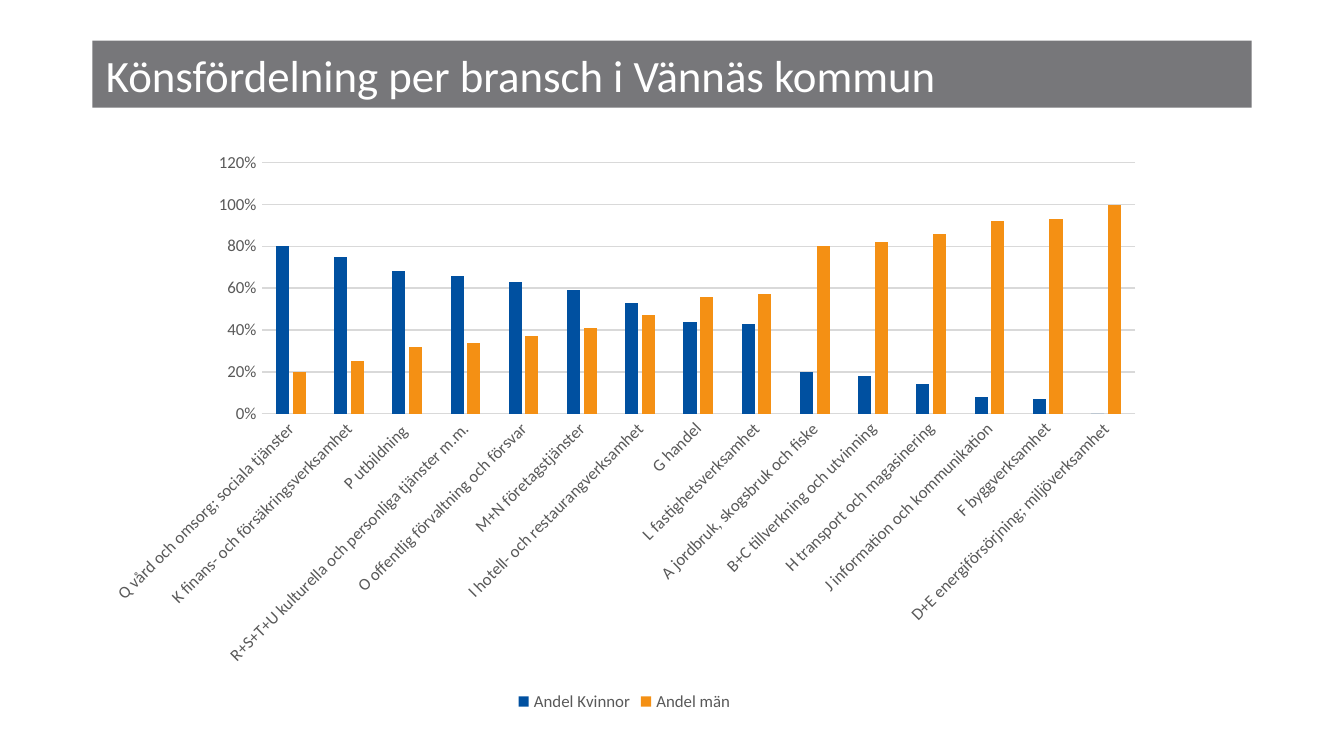
from dataclasses import dataclass

from pptx import Presentation
from pptx.chart.data import CategoryChartData
from pptx.dml.color import RGBColor
from pptx.enum.chart import XL_CHART_TYPE, XL_LEGEND_POSITION, XL_TICK_MARK
from pptx.enum.text import MSO_ANCHOR, PP_ALIGN
from pptx.util import Pt

COLUMN = XL_CHART_TYPE.COLUMN_CLUSTERED
LEGEND_BOTTOM = XL_LEGEND_POSITION.BOTTOM
NO_TICK = XL_TICK_MARK.NONE
MIDDLE = MSO_ANCHOR.MIDDLE
LEFT = PP_ALIGN.LEFT

EMU_PER_PX = 9525
TITLE_ONLY = 5
LABEL_ROTATION = -45 * 60000


@dataclass(frozen=True)
class Theme:
    font: str = "Calibri"
    title_size: int = 24
    chart_size: int = 10
    label_size: int = 9
    line_width: float = 0.75
    band: str = "77777A"
    white: str = "FFFFFF"
    black: str = "000000"
    label: str = "595959"
    grid: str = "D9D9D9"
    women: str = "0050A0"
    men: str = "F49014"


THEME = Theme()

TITLE = "Könsfördelning per bransch i Vännäs kommun"
SERIES_NAMES = ("Andel Kvinnor", "Andel män")
SHARES = [
    ("Q vård och omsorg; sociala tjänster", 0.8, 0.2),
    ("K finans- och försäkringsverksamhet", 0.75, 0.25),
    ("P utbildning ", 0.68, 0.32),
    ("R+S+T+U kulturella och personliga tjänster m.m.", 0.66, 0.34),
    ("O offentlig förvaltning och försvar", 0.63, 0.37),
    ("M+N företagstjänster", 0.59, 0.41),
    ("I hotell- och restaurangverksamhet", 0.53, 0.47),
    ("G handel", 0.44, 0.56),
    ("L fastighetsverksamhet", 0.43, 0.57),
    ("A jordbruk, skogsbruk och fiske", 0.2, 0.8),
    ("B+C tillverkning och utvinning", 0.18, 0.82),
    ("H transport och magasinering", 0.14, 0.86),
    ("J information och kommunikation", 0.08, 0.92),
    ("F byggverksamhet", 0.07, 0.93),
    ("D+E energiförsörjning; miljöverksamhet", 0, 1),
]


def px(*lengths):
    return [n * EMU_PER_PX for n in lengths]


def rgb(color):
    return RGBColor.from_string(color)


def style_font(font, size, color):
    font.name = THEME.font
    font.size = Pt(size)
    font.bold = False
    font.color.rgb = rgb(color)


def style_line(line):
    line.color.rgb = rgb(THEME.grid)
    line.width = Pt(THEME.line_width)


def set_title(s, text, box):
    sp = s.shapes.title
    sp.left, sp.top, sp.width, sp.height = px(*box)
    sp.fill.solid()
    sp.fill.fore_color.rgb = rgb(THEME.band)
    tf = sp.text_frame
    tf.text = text
    tf.word_wrap = True
    tf.vertical_anchor = MIDDLE
    p = tf.paragraphs[0]
    p.alignment = LEFT
    style_font(p.runs[0].font, THEME.title_size, THEME.white)


def style_axis(axis):
    axis.major_tick_mark = NO_TICK
    axis.minor_tick_mark = NO_TICK
    style_font(axis.tick_labels.font, THEME.label_size, THEME.label)


def style_axes(chart):
    category, value = chart.category_axis, chart.value_axis
    style_axis(category)
    style_line(category.format.line)
    category._element.txPr.bodyPr.set("rot", str(LABEL_ROTATION))

    style_axis(value)
    value.format.line.fill.background()
    value.has_major_gridlines = True
    style_line(value.major_gridlines.format.line)
    value.minimum_scale = 0
    value.maximum_scale = 1.2
    value.major_unit = 0.2
    value.tick_labels.number_format = "0%"
    value.tick_labels.number_format_is_linked = False


def add_share_chart(s, box):
    branches, *shares = zip(*SHARES)
    data = CategoryChartData(number_format="0%")
    data.categories = branches
    for name, values in zip(SERIES_NAMES, shares):
        data.add_series(name, values)

    chart = s.shapes.add_chart(COLUMN, *px(*box), data).chart
    style_font(chart.font, THEME.chart_size, THEME.black)
    chart.has_title = False
    style_axes(chart)

    plot = chart.plots[0]
    plot.gap_width = 219
    plot.overlap = -27
    plot.vary_by_categories = False
    for series, color in zip(plot.series, (THEME.women, THEME.men)):
        series.format.fill.solid()
        series.format.fill.fore_color.rgb = rgb(color)

    chart.has_legend = True
    chart.legend.position = LEGEND_BOTTOM
    chart.legend.include_in_layout = False
    style_font(chart.legend.font, THEME.label_size, THEME.label)


def main():
    prs = Presentation()
    prs.slide_width, prs.slide_height = px(960, 540)
    s = prs.slides.add_slide(prs.slide_layouts[TITLE_ONLY])
    set_title(s, TITLE, (66, 29, 828, 48))
    add_share_chart(s, (66, 101, 760, 411))
    prs.save("out.pptx")


if __name__ == "__main__":
    main()
